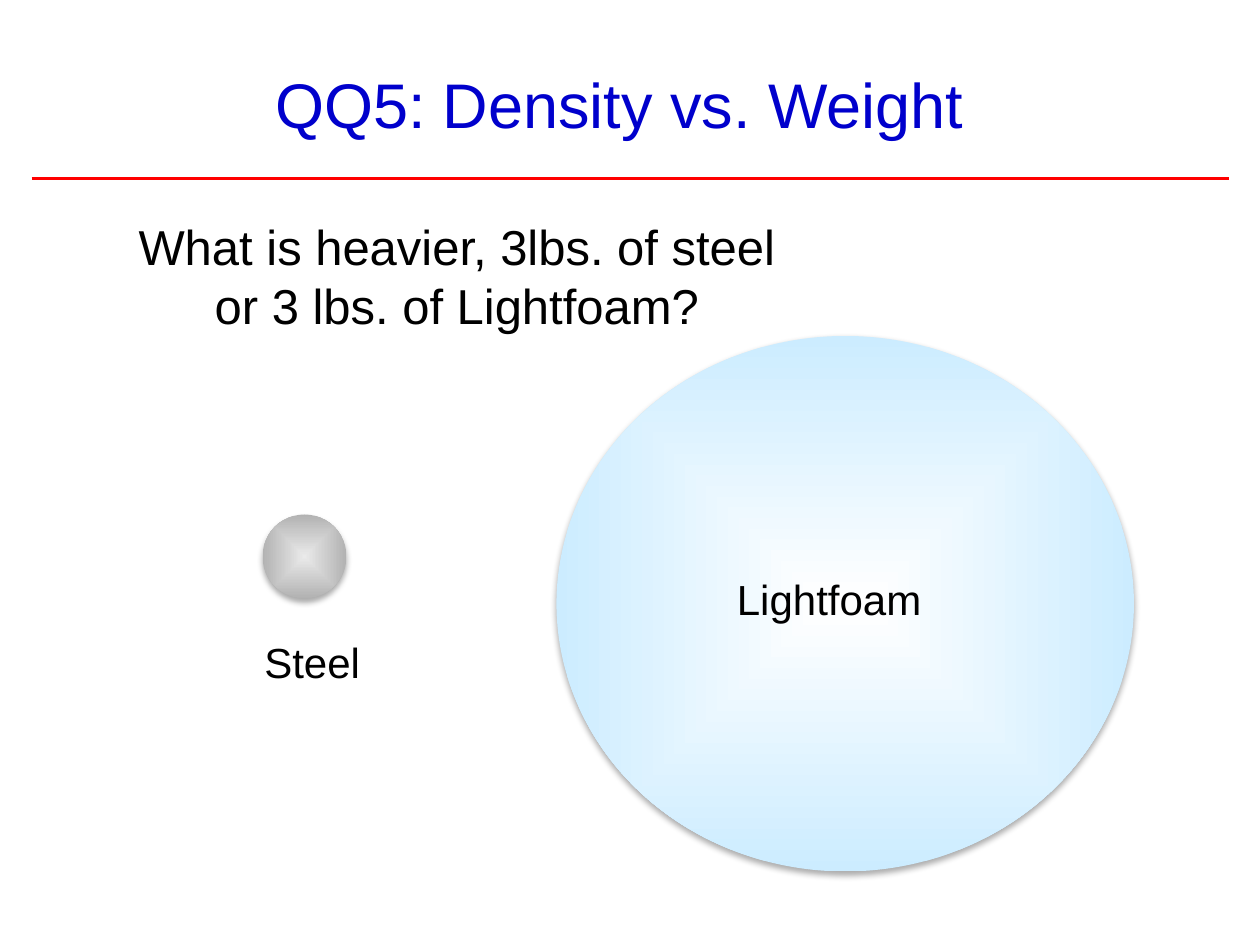
import pptx
import pptx.util
import pptx.dml.color
import pptx.enum.shapes
import pptx.enum.text
import pptx.oxml
import pptx.oxml.ns

Inches = pptx.util.Inches
RGB = pptx.dml.color.RGBColor
Text = pptx.enum.text
qn = pptx.oxml.ns.qn

BLUE = RGB(0x00, 0x00, 0xCC)
RED = RGB(0xFF, 0x00, 0x00)
BLACK = RGB(0x00, 0x00, 0x00)
WHITE = RGB(0xFF, 0xFF, 0xFF)
SKY = RGB(0xCC, 0xEC, 0xFF)
PALE = RGB(0xEA, 0xEA, 0xEA)
GRAY = RGB(0xB2, 0xB2, 0xB2)

# Content: boxes are left, top, width, height
# Title, rule and balls sit on a grid of 1/12 inch; text boxes are in inches
TITLE = ("QQ5: Density vs. Weight", (25, 4, 84, 10))
RULE = (3, 17, 117, 17)  # from x, y to x, y
ASK = ("What is heavier, 3lbs. of steel or 3 lbs. of Lightfoam?",
       (1, 1.67, 5.25, 1.04))
BALLS = [  # ball box, center color, edge color, label, label box
    ((53, 32, 55, 51), WHITE, SKY, "Lightfoam", (5.75, 4.5, 1.72, 0.5)),
    ((25, 49, 8, 8), PALE, GRAY, "Steel", (2, 5, 0.97, 0.5)),
]

NS = 'xmlns:a="http://schemas.openxmlformats.org/drawingml/2006/main"'
PATH = (f'<a:path {NS} path="shape"><a:fillToRect l="50000" t="50000" '
        'r="50000" b="50000"/></a:path>')
SHADOW = (f'<a:outerShdw {NS} blurRad="44450" dist="27940" dir="5400000" '
          'algn="ctr" rotWithShape="0"><a:srgbClr val="000000">'
          '<a:alpha val="32000"/></a:srgbClr></a:outerShdw>')


def inch(box):
    return [Inches(v) for v in box]


def grid(box):
    return [Inches(v / 12) for v in box]


def write(shape, text, size, color, align, wrap=True):
    frame = shape.text_frame
    frame.text = text
    frame.word_wrap = wrap
    para = frame.paragraphs[0]
    para.alignment = align
    para.font.name = "Arial"
    para.font.size = pptx.util.Pt(size)
    para.font.color.rgb = color
    return frame


def add_ball(slide, box, inner, outer):
    kind = pptx.enum.shapes.MSO_SHAPE.OVAL
    ball = slide.shapes.add_shape(kind, *grid(box))
    ball.fill.gradient()
    for stop, color, place in zip(ball.fill.gradient_stops,
                                  (inner, outer), (0, 1)):
        stop.color.rgb = color
        stop.position = place
    ball.line.fill.background()
    ball.shadow.inherit = False
    props = ball.element.spPr
    grad = props.find(qn("a:gradFill"))
    grad.replace(grad.find(qn("a:lin")), pptx.oxml.parse_xml(PATH))
    props.find(qn("a:effectLst")).append(pptx.oxml.parse_xml(SHADOW))


def main():
    deck = pptx.Presentation()
    deck.slide_width, deck.slide_height = Inches(10), Inches(7.5)
    slide = deck.slides.add_slide(deck.slide_layouts[5])
    left, center = Text.PP_ALIGN.LEFT, Text.PP_ALIGN.CENTER

    # Title and rule
    text, box = TITLE
    title = slide.shapes.title
    title.left, title.top, title.width, title.height = grid(box)
    frame = write(title, text, 36, BLUE, left)
    frame.vertical_anchor = Text.MSO_ANCHOR.BOTTOM
    frame.auto_size = Text.MSO_AUTO_SIZE.NONE
    rule = slide.shapes.add_connector(
        pptx.enum.shapes.MSO_CONNECTOR.STRAIGHT, *grid(RULE))
    rule.line.color.rgb = RED
    rule.line.width = pptx.util.Pt(1.5)
    rule.element.spPr.append(pptx.oxml.parse_xml(f"<a:effectLst {NS}/>"))

    # Balls with their labels
    for ball, inner, outer, name, spot in BALLS:
        add_ball(slide, ball, inner, outer)
        label = slide.shapes.add_textbox(*inch(spot))
        write(label, name, 24, BLACK, left, wrap=False)

    # Question
    text, box = ASK
    write(slide.shapes.add_textbox(*inch(box)), text, 28, BLACK, center)

    deck.save("out.pptx")


if __name__ == "__main__":
    main()
